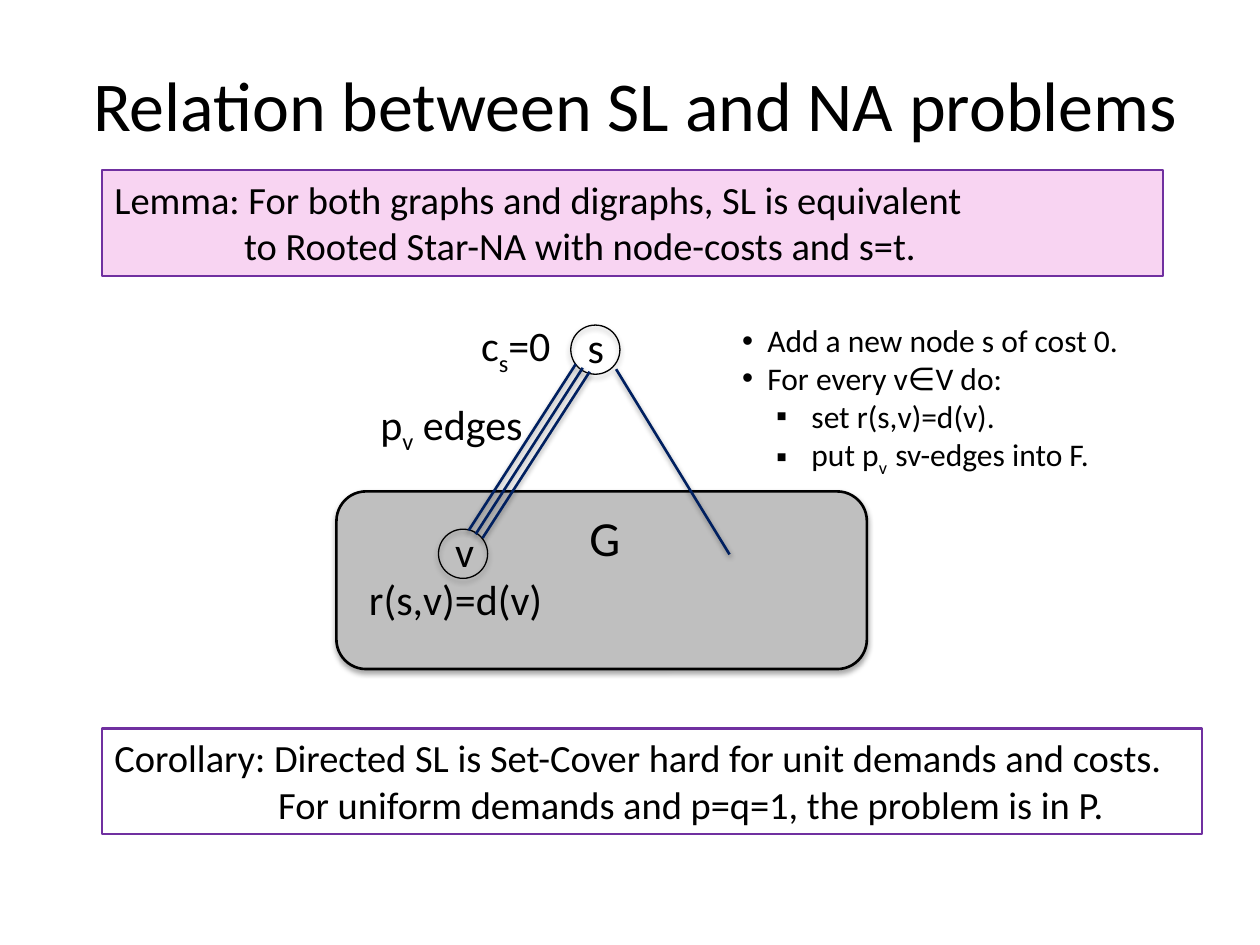
import pptx
import pptx.util
import pptx.dml.color
import pptx.enum.shapes
import pptx.enum.text
import pptx.oxml
import pptx.oxml.ns
from lxml import etree

Pt = pptx.util.Pt
Kind = pptx.enum.shapes.MSO_SHAPE
Fit = pptx.enum.text.MSO_AUTO_SIZE
Mid = pptx.enum.text.MSO_ANCHOR.MIDDLE
Align = pptx.enum.text.PP_ALIGN
qn = pptx.oxml.ns.qn
CELL = pptx.util.Inches(0.1)
FONT = "Calibri"


def cells(*nums):
    return [round(n * CELL) for n in nums]


def color(code):
    return pptx.dml.color.RGBColor.from_string(code)


def style(par, size):
    par.font.size = Pt(size)
    par.font.name = FONT
    par.font.color.rgb = color("000000")


def add_runs(par, parts):
    for part in parts:
        low = isinstance(part, tuple)
        run = par.add_run()
        run.text = part[0] if low else part
        if low:
            run.font._element.set("baseline", "-25000")
        if run.text == "∈":
            run.font.name = "Lato"


def indent(par, left, hang=0):
    props = par._p.get_or_add_pPr()
    props.set("marL", str(cells(left)[0]))
    props.set("indent", str(-cells(hang)[0]))
    return props


def cast(shape, drop, alpha):
    props = shape._element.spPr
    effect = props.find(qn("a:effectLst"))
    if effect is None:
        effect = etree.SubElement(props, qn("a:effectLst"))
    shade = etree.SubElement(effect, qn("a:outerShdw"), blurRad=str(Pt(3.1)),
                             dist=str(Pt(drop)), dir="5400000", rotWithShape="0")
    tone = etree.SubElement(shade, qn("a:srgbClr"), val="000000")
    etree.SubElement(tone, qn("a:alpha"), val=str(alpha * 1000))


def draw(shapes, kind, box, edge, width, fill=None):
    shape = shapes.add_shape(kind, *cells(*box))
    shape.shadow.inherit = False
    if fill:
        shape.fill.solid()
        shape.fill.fore_color.rgb = color(fill)
    else:
        shape.fill.background()
    shape.line.color.rgb = color(edge)
    shape.line.width = Pt(width)
    return shape


def label(shapes, box, parts, size=24):
    frame = shapes.add_textbox(*cells(*box)).text_frame
    frame.word_wrap = False
    par = frame.paragraphs[0]
    style(par, size)
    add_runs(par, parts)


def head(slide, box, text):
    title = slide.shapes.title
    title.left, title.top, title.width, title.height = cells(*box)
    frame = title.text_frame
    frame.text = text
    frame.vertical_anchor = Mid
    frame.paragraphs[0].alignment = Align.CENTER
    style(frame.paragraphs[0], 40)


def claim(slide, box, lines, inset, fill=None):
    shape = draw(slide.shapes, Kind.RECTANGLE, box, "7030A0", 1.5, fill)
    if fill:
        tone = shape._element.spPr.find(qn("a:solidFill"))[0]
        etree.SubElement(tone, qn("a:alpha"), val="20000")
    frame = shape.text_frame
    frame.word_wrap = True
    frame.vertical_anchor = pptx.enum.text.MSO_ANCHOR.TOP
    for i, line in enumerate(lines):
        par = frame.add_paragraph() if i else frame.paragraphs[0]
        par.text = line
        par.alignment = Align.LEFT
        style(par, 22)
        indent(par, inset * i)


def node(slide, x, y, name):
    group = slide.shapes.add_group_shape()
    ring = draw(group.shapes, Kind.OVAL, (x, y, 3.9, 3.9), "000000", 0.75)
    cast(ring, 1.8, 35)
    label(group.shapes, (x + 0.35, y - 0.8, 3.3, 5), [name])


def edge(slide, start, end):
    line = slide.shapes.add_connector(pptx.enum.shapes.MSO_CONNECTOR.STRAIGHT,
                                      *cells(*start, *end))
    line.line.color.rgb = color("002060")
    line.line.width = Pt(1.5)
    cast(line, 1.6, 38)


def graph(slide, box):
    x, y, wide, tall = box
    deep = tall / 2
    node(slide, x + 18.6, y + 0.9, "s")
    body = draw(slide.shapes, Kind.ROUNDED_RECTANGLE,
                (x, y + tall - deep, wide, deep), "000000", 1.5, "BFBFBF")
    cast(body, 1.8, 35)
    label(slide.shapes, (x + 19.1, y + 14.9, 4.5, 5.7), ["G"], 28)
    node(slide, x + 8.1, y + 17.1, "v")
    for dx, dy, w, parts in (
        (10.5, 0, 7.7, ["c", ("s",), "=0"]),
        (1.6, 20.1, 15.9, ["r(s,v)=d(v)"]),
        (2.5, 6.2, 14.1, ["p", ("v",), " edges"]),
    ):
        label(slide.shapes, (x + dx, y + dy, w, 5), parts)
    for i in range(3):
        left, top = x + 19 + 0.55 * i, y + 4 + 0.3 * i
        edge(slide, (left, top), (left - 8.5, top + 13.2))
    edge(slide, (x + 22.2, y + 4.4), (x + 31.2, y + 19.1))


def steps(slide, box, items):
    body = slide.placeholders[1]
    body.left, body.top, body.width, body.height = cells(*box)
    frame = body.text_frame
    frame.auto_size = Fit.NONE
    for i, (level, parts) in enumerate(items):
        par = frame.add_paragraph() if i else frame.paragraphs[0]
        par.level = level
        par.space_before = Pt(0)
        style(par, 18)
        add_runs(par, parts)
        props = indent(par, *((5.5, 2.8) if level else (2, 2)))
        face = etree.SubElement(props, qn("a:buFont"), typeface="Arial")
        mark = etree.SubElement(props, qn("a:buChar"), char="▪" if level else "•")
        fonts = props.find(qn("a:defRPr"))
        fonts.addprevious(face)
        fonts.addprevious(mark)


def main():
    deck = pptx.Presentation()
    deck.slide_width, deck.slide_height = cells(100, 75)
    slide = deck.slides.add_slide(deck.slide_layouts[1])
    head(slide, (5.4, 3, 90, 10.4), "Relation between SL and NA problems")
    claim(slide, (8.1, 13.5, 84.2, 8.4),
          ["Lemma: For both graphs and digraphs, SL is equivalent",
           "to Rooted Star-NA with node-costs and s=t."], 10.3, "E02CBE")
    claim(slide, (8.1, 57.8, 87.3, 8.4),
          ["Corollary: Directed SL is Set-Cover hard for unit demands and costs.",
           "For uniform demands and p=q=1, the problem is in P."], 13)
    graph(slide, (26.7, 24.9, 42.1, 28.2))
    steps(slide, (57.9, 25, 34.4, 13.1), [
        (0, ["Add a new node s of cost 0."]),
        (0, ["For every v", "∈", "V do:"]),
        (1, ["set r(s,v)=d(v)."]),
        (1, ["put p", ("v  ",), "sv-edges into F."]),
    ])
    deck.save("out.pptx")


if __name__ == "__main__":
    main()
